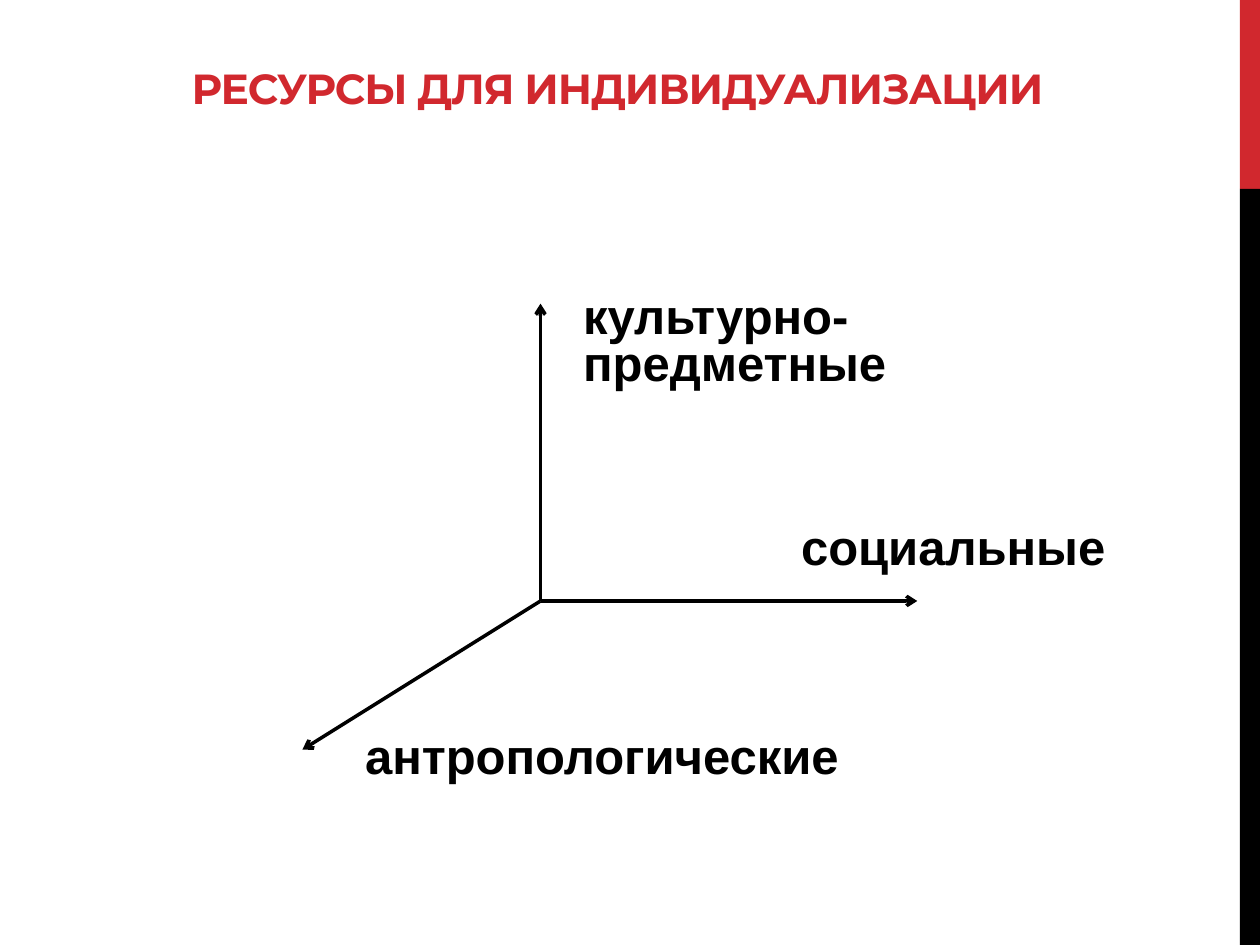
from dataclasses import dataclass

from lxml.etree import SubElement
from pptx import Presentation
from pptx.dml.color import RGBColor
from pptx.enum.shapes import MSO_CONNECTOR, MSO_SHAPE
from pptx.enum.text import MSO_ANCHOR, MSO_AUTO_SIZE, PP_ALIGN
from pptx.oxml.ns import qn
from pptx.util import Inches, Pt


@dataclass(frozen=True)
class Theme:
    """Colours, fonts and sizes of the slide."""
    accent: RGBColor = RGBColor(0xD1, 0x28, 0x2E)
    ink: RGBColor = RGBColor(0, 0, 0)
    title_font: str = "Montserrat"
    label_font: str = "Arial"
    title_size: Pt = Pt(24)
    label_size: Pt = Pt(28)
    axis_width: Pt = Pt(2)
    line_spacing: float = 0.8
    title_tracking: int = -60


THEME = Theme()


def style_paragraph(p, font, size, color):
    """Apply bold type and the common line spacing."""
    p.line_spacing = THEME.line_spacing
    p.font.name = font
    p.font.size = size
    p.font.bold = True
    p.font.color.rgb = color


def add_side_band(slide, left, top, width, height):
    """Draw the edge band, one fifth accent and the rest black."""
    split = int(height / 5)
    parts = ((top, split, THEME.accent), (top + split, height - split, THEME.ink))
    for y, h, color in parts:
        sp = slide.shapes.add_shape(MSO_SHAPE.RECTANGLE, left, y, width, h)
        sp.shadow.inherit = False
        sp.fill.solid()
        sp.fill.fore_color.rgb = color
        sp.line.fill.background()


def add_title(slide, text, left, top, width, height):
    """Place and format the title placeholder."""
    sp = slide.shapes.title
    sp.left, sp.top, sp.width, sp.height = left, top, width, height
    tf = sp.text_frame
    tf.text = text
    tf.word_wrap = True
    tf.auto_size = MSO_AUTO_SIZE.NONE
    tf.vertical_anchor = MSO_ANCHOR.BOTTOM
    p = tf.paragraphs[0]
    p.alignment = PP_ALIGN.CENTER
    style_paragraph(p, THEME.title_font, THEME.title_size, THEME.accent)
    p.runs[0]._r.get_or_add_rPr().set("spc", str(THEME.title_tracking))


def add_arrow(shapes, start, end):
    """Draw one axis with an arrowhead at its end."""
    line = shapes.add_connector(MSO_CONNECTOR.STRAIGHT, *start, *end)
    line.line.color.rgb = THEME.ink
    line.line.width = THEME.axis_width
    SubElement(line.line._get_or_add_ln(), qn("a:tailEnd"), type="arrow")
    SubElement(line._element.spPr, qn("a:effectLst"))


def add_label(slide, lines, left, top, width, height):
    """Add an axis label, one paragraph a line."""
    tf = slide.shapes.add_textbox(left, top, width, height).text_frame
    tf.word_wrap = True
    tf.auto_size = MSO_AUTO_SIZE.SHAPE_TO_FIT_TEXT
    tf.text = "\n".join(lines)
    for p in tf.paragraphs:
        style_paragraph(p, THEME.label_font, THEME.label_size, THEME.ink)


def add_axes(slide, left, top, width, height):
    """Draw the three resource axes and their labels."""
    origin = (left + Inches(1.89), top + Inches(2.36))
    ends = (
        (origin[0], top),
        (left + width, origin[1]),
        (left, top + height),
    )
    group = slide.shapes.add_group_shape()
    for end in ends:
        add_arrow(group.shapes, origin, end)

    labels = (
        (("антропологические",), 0.4, 3.39, 4.17, 0.47),
        (("культурно-", "предметные"), 2.13, -0.1, 4.25, 0.85),
        (("социальные",), 3.86, 1.73, 2.94, 0.47),
    )
    for lines, dx, dy, w, h in labels:
        add_label(slide, lines, left + Inches(dx), top + Inches(dy), Inches(w), Inches(h))


def main():
    """Build and save the slide."""
    prs = Presentation()
    prs.slide_width, prs.slide_height = Inches(10), Inches(7.5)
    slide = prs.slides.add_slide(prs.slide_layouts.get_by_name("Title Only"))
    add_side_band(slide, Inches(9.84), 0, Inches(0.16), prs.slide_height)
    add_title(slide, "РЕСУРСЫ ДЛЯ ИНДИВИДУАЛИЗАЦИИ",
              Inches(0.5), Inches(0.17), Inches(8.8), Inches(0.77))
    add_axes(slide, Inches(2.4), Inches(2.41), Inches(4.88), Inches(3.54))
    prs.save("out.pptx")


if __name__ == "__main__":
    main()
